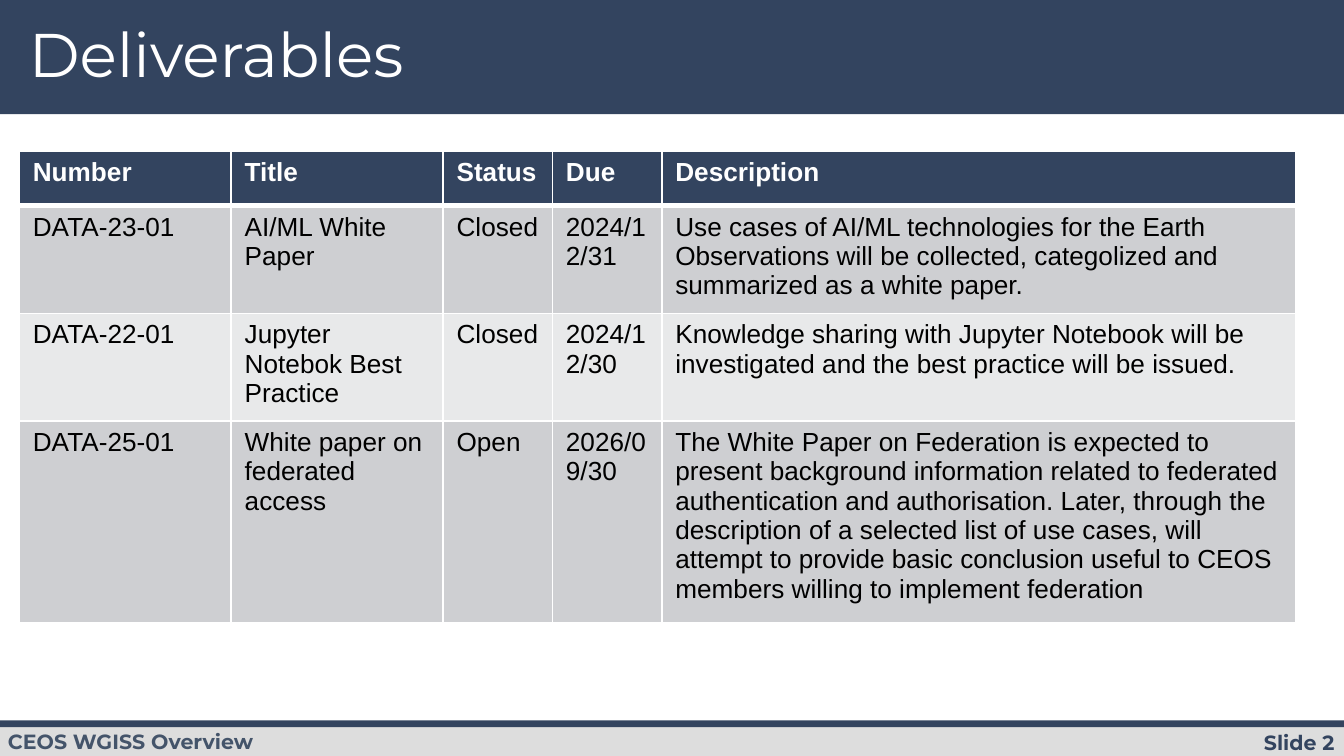
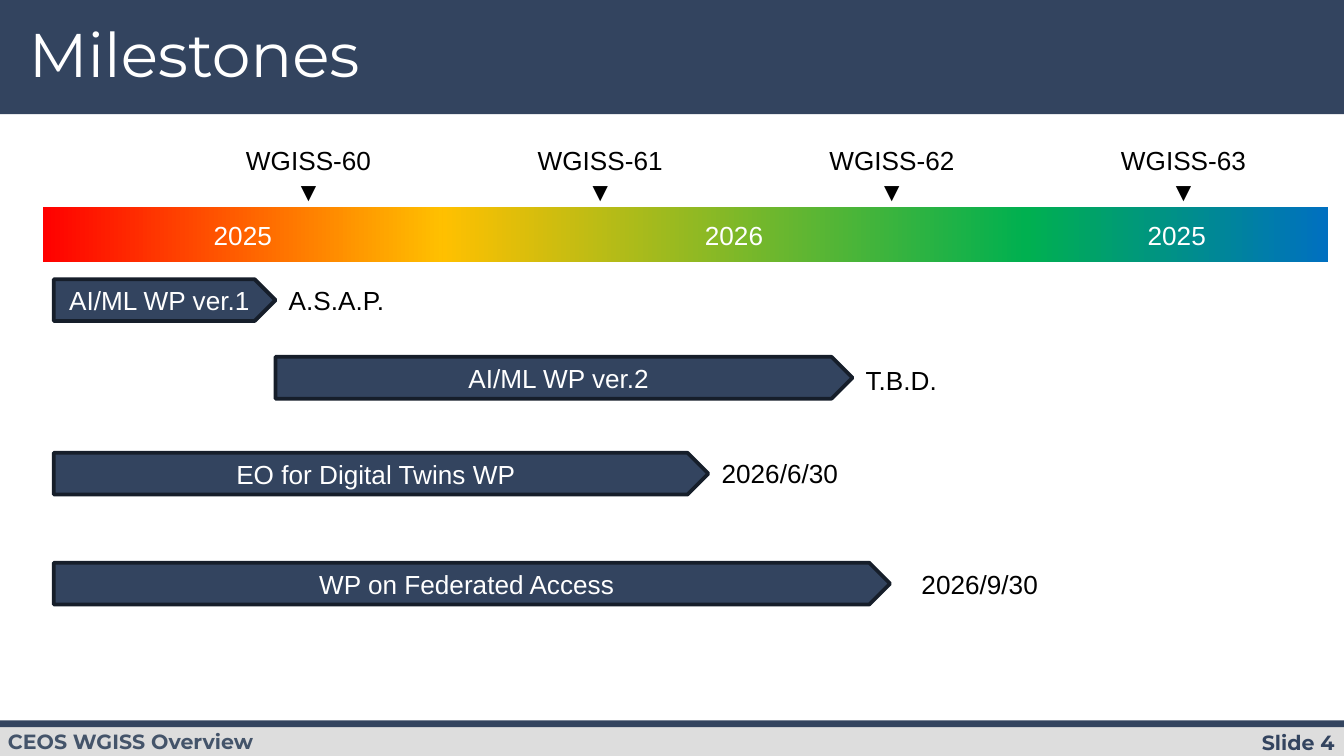
from dataclasses import dataclass

from lxml.etree import SubElement
from pptx import Presentation
from pptx.dml.color import RGBColor
from pptx.enum.shapes import MSO_SHAPE
from pptx.enum.text import MSO_ANCHOR, PP_ALIGN
from pptx.oxml.ns import qn
from pptx.util import Pt


@dataclass(frozen=True)
class Theme:
    navy: str = "33445F"
    outline: str = "161E2A"
    slate: str = "44546A"
    footer: str = "DDDDDD"
    white: str = "FFFFFF"
    black: str = "000000"
    band_dark: str = "CECFD2"
    band_light: str = "E8E9EA"
    spectrum: tuple = ("FF0000", "FFC000", "00B050", "0070C0")
    heading_font: str = "Montserrat"
    body_font: str = "Arial"
    title_size: float = 33
    body_size: float = 14
    footer_size: float = 11


THEME = Theme()
WIDTH, HEIGHT = 720, 405


class Deck:
    def __init__(self, theme):
        self.theme = theme
        self.presentation = Presentation()
        self.presentation.slide_width = Pt(WIDTH)
        self.presentation.slide_height = Pt(HEIGHT)
        self.slide = None

    def add_lines(self, frame, lines, color, size=None, font=None, bold=False,
                  align=PP_ALIGN.LEFT, spacing=None):
        for index, line in enumerate(lines):
            paragraph = frame.add_paragraph() if index else frame.paragraphs[0]
            paragraph.alignment = align
            if spacing:
                paragraph.line_spacing = spacing
            run = paragraph.add_run()
            run.text = line
            run.font.size = Pt(size or self.theme.body_size)
            run.font.name = font or self.theme.body_font
            run.font.bold = bold
            run.font.color.rgb = RGBColor.from_string(color)

    def text(self, box, lines, color, insets=(7.2, 3.6), wrap=True, **style):
        frame = self.slide.shapes.add_textbox(*map(Pt, box)).text_frame
        frame.word_wrap = wrap
        frame.margin_left = frame.margin_right = Pt(insets[0])
        frame.margin_top = frame.margin_bottom = Pt(insets[1])
        self.add_lines(frame, lines, color, **style)

    def block(self, box, fill, kind=MSO_SHAPE.RECTANGLE, label=None, outline=None):
        shape = self.slide.shapes.add_shape(kind, *map(Pt, box))
        shape.shadow.inherit = False
        if isinstance(fill, str):
            shape.fill.solid()
            shape.fill.fore_color.rgb = RGBColor.from_string(fill)
        else:
            shape.fill.gradient()
            shape.fill.gradient_angle = 0
            for position, (stop, color) in enumerate(zip(shape.fill.gradient_stops, fill)):
                stop.position = position
                stop.color.rgb = RGBColor.from_string(color)
        if outline:
            shape.line.color.rgb = RGBColor.from_string(outline)
            shape.line.width = Pt(2)
        else:
            shape.line.fill.background()
        if label:
            shape.text_frame.vertical_anchor = MSO_ANCHOR.MIDDLE
            self.add_lines(shape.text_frame, [label], self.theme.white,
                           align=PP_ALIGN.CENTER)

    def page(self, title, number):
        theme = self.theme
        self.slide = self.presentation.slides.add_slide(self.presentation.slide_layouts[6])
        self.block((0, 0, WIDTH, 61.2), theme.navy)
        self.block((0, 388.4, WIDTH, 16.6), theme.footer)
        self.block((0, 386, WIDTH, 3.6), theme.navy)
        footer = dict(size=theme.footer_size, font=theme.heading_font, bold=True)
        self.text((606.2, 388.4, 113.8, 18.7), [f"Slide {number}"], theme.navy,
                  insets=(5, 2.9), align=PP_ALIGN.RIGHT, **footer)
        self.text((-2.9, 383.8, 227.5, 28.1), ["CEOS WGISS Overview"], theme.slate,
                  insets=(7.2, 7.2), **footer)
        self.text((10.1, 10.1, 554.4, 46), [title], theme.white, insets=(5.4, 2.7),
                  size=theme.title_size, font=theme.heading_font, spacing=0.9)

    def border(self, cell, side, width):
        line = SubElement(cell._tc.get_or_add_tcPr(), qn(f"a:ln{side}"), w=str(Pt(width)))
        fill = SubElement(line, qn("a:solidFill"))
        SubElement(fill, qn("a:srgbClr"), val=self.theme.white)

    def table(self, left, top, widths, row_height, rows):
        theme = self.theme
        table = self.slide.shapes.add_table(
            len(rows), len(widths), Pt(left), Pt(top),
            Pt(sum(widths)), Pt(row_height * len(rows))).table
        for column, width in zip(table.columns, widths):
            column.width = Pt(width)
        for r, row in enumerate(rows):
            header = r == 0
            fill = theme.navy if header else theme.band_dark if r % 2 else theme.band_light
            for c, value in enumerate(row):
                cell = table.cell(r, c)
                self.border(cell, "L", 1)
                self.border(cell, "R", 1)
                self.border(cell, "T", 3 if r == 1 else 1)
                self.border(cell, "B", 3 if header else 1)
                cell.fill.solid()
                cell.fill.fore_color.rgb = RGBColor.from_string(fill)
                self.add_lines(cell.text_frame, [value],
                               theme.white if header else theme.black, bold=header)


DELIVERABLES = [
    ("Number", "Title", "Status", "Due", "Description"),
    ("DATA-23-01", "AI/ML White Paper", "Closed", "2024/12/31",
     "Use cases of AI/ML technologies for the Earth Observations will be collected, "
     "categolized and summarized as a white paper."),
    ("DATA-22-01", "Jupyter Notebok Best Practice", "Closed", "2024/12/30",
     "Knowledge sharing with Jupyter Notebook will be investigated and the best "
     "practice will be issued."),
    ("DATA-25-01", "White paper on federated access", "Open", "2026/09/30",
     "The White Paper on Federation is expected to present background information "
     "related to federated authentication and authorisation. Later, through the "
     "description of a selected list of use cases, will attempt to provide basic "
     "conclusion useful to CEOS members willing to implement federation"),
]

YEARS = [("2025", 23, 214.2), ("2026", 237.2, 312), ("2025", 549.2, 162.4)]

TASKS = [
    ("AI/ML WP ver.1", 28.8, 149.6, 118.8, "A.S.A.P.", 147.6, 149),
    ("AI/ML WP ver.2", 147.6, 191.2, 309.1, "T.B.D.", 456.7, 191.7),
    ("EO for Digital Twins WP", 28.8, 242.6, 350.7, "2026/6/30", 379.5, 241.5),
    ("WP on Federated Access", 28.8, 301.5, 448.1, "2026/9/30", 486.6, 301),
]


def deliverables(deck):
    deck.page("Deliverables", 2)
    deck.table(10.4, 81, (113.5, 113.5, 58.6, 58.6, 339.8), 29.2, DELIVERABLES)


def milestones(deck):
    theme = deck.theme
    deck.page("Milestones", 4)
    for index in range(4):
        deck.text((131.5 + 156.25 * index, 77.2, 67.7, 33.9),
                  [f"WGISS-{60 + index}", "▼"], theme.black,
                  insets=(0, 0), wrap=False, align=PP_ALIGN.CENTER)
    for (year, left, width), colors in zip(YEARS, zip(theme.spectrum, theme.spectrum[1:])):
        deck.block((left, 111, width, 29.4), colors, label=year)
    for name, left, top, width, due, due_left, due_top in TASKS:
        deck.block((left, top, width, 22.4), theme.navy, MSO_SHAPE.PENTAGON,
                   name, theme.outline)
        deck.text((due_left, due_top, 77, 24.2), [due], theme.black, wrap=False)


def main():
    deck = Deck(THEME)
    deliverables(deck)
    milestones(deck)
    deck.presentation.save("out.pptx")


if __name__ == "__main__":
    main()
